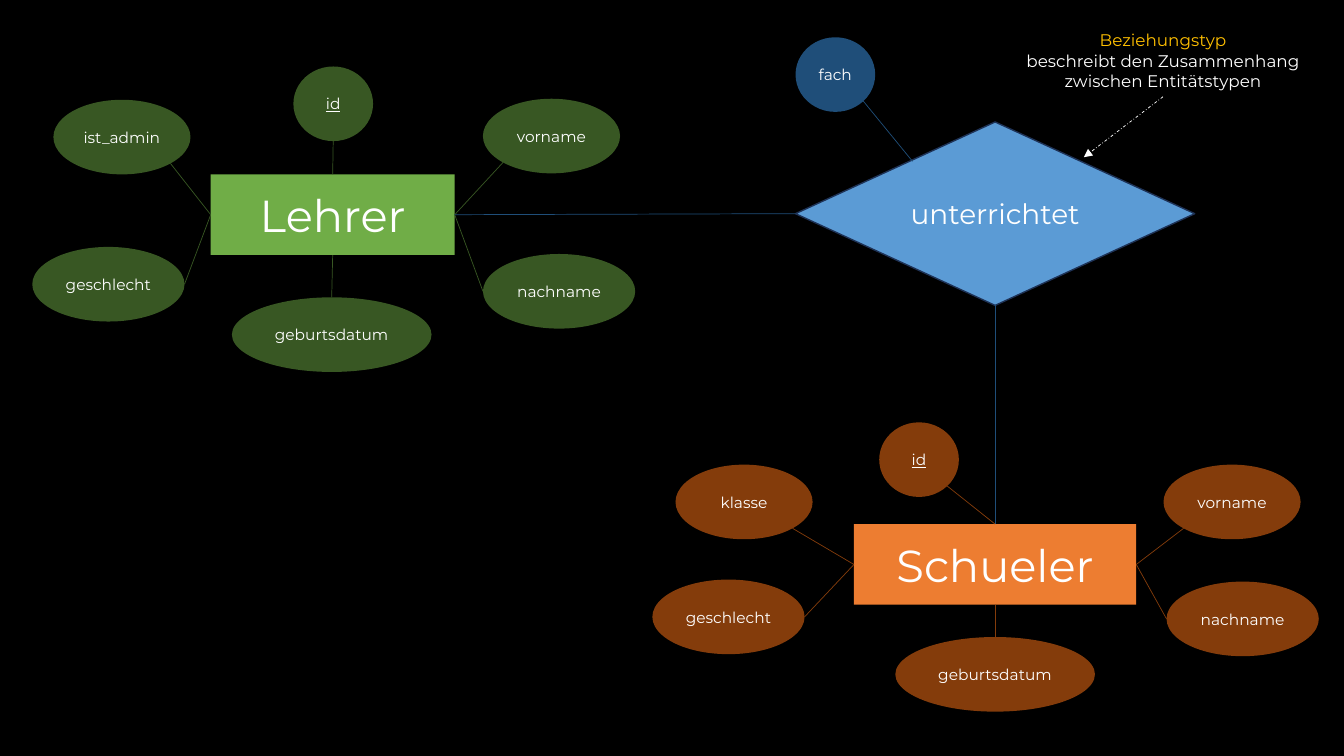
from math import hypot

from lxml import etree
from pptx import Presentation
from pptx.dml.color import RGBColor
from pptx.enum import dml, shapes, text
from pptx.oxml.ns import qn
from pptx.util import Inches, Pt

COLOURS = {
    "background": "000000", "text": "FFFFFF", "highlight": "FFC000",
    "teacher": "70AD47", "teacher_attribute": "385723",
    "student": "ED7D31", "student_attribute": "843C0B",
    "relation": "5B9BD5", "relation_attribute": "1F4E79", "relation_edge": "1E3256",
}
FONT = "Montserrat"
TOP, LEFT, BOTTOM, RIGHT = range(4)
FORMS = shapes.MSO_SHAPE

deck = Presentation()
deck.slide_width, deck.slide_height = Inches(13.33), Inches(7.5)
page = deck.slides.add_slide(deck.slide_layouts[6])
page.background.fill.solid()
page.background.fill.fore_color.rgb = RGBColor.from_string(COLOURS["background"])


def add_figure(form, place, colour, label, size):
    figure = page.shapes.add_shape(form, *map(Inches, place))
    figure.shadow.inherit = False
    figure.fill.solid()
    figure.fill.fore_color.rgb = RGBColor.from_string(COLOURS[colour])
    figure.line.fill.background()
    frame = figure.text_frame
    frame.word_wrap = False
    frame.vertical_anchor = text.MSO_ANCHOR.MIDDLE
    para = frame.paragraphs[0]
    para.alignment = text.PP_ALIGN.CENTER
    span = para.add_run()
    span.text = label
    span.font.name, span.font.size = FONT, Pt(size)
    span.font.underline = True if label == "id" else None
    span.font.color.rgb = RGBColor.from_string(COLOURS["text"])
    return figure


def add_link(figure, side, end, colour):
    """Draw a thin line from one side of a figure to a free point in inches."""
    link = page.shapes.add_connector(shapes.MSO_CONNECTOR.STRAIGHT, 0, 0, *map(Inches, end))
    link.begin_connect(figure, side)
    link.line.width = Pt(0.5)
    link.line.color.rgb = RGBColor.from_string(COLOURS[colour])
    etree.SubElement(link._element.spPr, qn("a:effectLst"))
    return link


# Attributes: label, left, top, width, side of the entity, direction to the rim point
entities = [
    ("Lehrer", "teacher", (2.09, 1.73, 2.42, 0.8), [
        ("id", 2.91, 0.66, 0.79, TOP, (0, 1)),
        ("vorname", 4.79, 0.98, 1.36, RIGHT, (-1, 1)),
        ("geschlecht", 0.32, 2.45, 1.51, LEFT, (1, 0)),
        ("geburtsdatum", 2.3, 2.95, 1.98, BOTTOM, (0, -1)),
        ("nachname", 4.79, 2.52, 1.51, RIGHT, (-1, 0)),
        ("ist_admin", 0.53, 0.99, 1.36, LEFT, (1, 1)),
    ]),
    ("Schueler", "student", (8.47, 5.2, 2.8, 0.8), [
        ("id", 8.72, 4.19, 0.79, TOP, (1, 1)),
        ("vorname", 11.54, 4.61, 1.36, RIGHT, (-1, 1)),
        ("geschlecht", 6.47, 5.75, 1.51, LEFT, (1, 0)),
        ("geburtsdatum", 8.88, 6.32, 1.98, BOTTOM, (0, -1)),
        ("nachname", 11.57, 5.77, 1.51, RIGHT, (-1, 0)),
        ("klasse", 6.7, 4.61, 1.36, LEFT, (1, 1)),
    ]),
]
ATTRIBUTE_HEIGHT = 0.74
boxes = {}
for name, colour, place, attributes in entities:
    boxes[name] = add_figure(FORMS.RECTANGLE, place, colour, name, 32)
    shade = f"{colour}_attribute"
    for label, left, top, width, side, (across, down) in attributes:
        add_figure(FORMS.OVAL, (left, top, width, ATTRIBUTE_HEIGHT), shade, label, 11)
        reach = hypot(across, down)
        rim = (left + width / 2 * (1 + across / reach),
               top + ATTRIBUTE_HEIGHT / 2 * (1 + down / reach))
        add_link(boxes[name], side, rim, shade)

# Relationship with its own attribute
relation = add_figure(FORMS.DIAMOND, (7.89, 1.21, 3.96, 1.82), "relation", "unterrichtet", 20)
relation.line.width = Pt(1)
relation.line.color.rgb = RGBColor.from_string(COLOURS["relation_edge"])
for name, entity_side, relation_side in [("Lehrer", RIGHT, LEFT), ("Schueler", TOP, BOTTOM)]:
    link = add_link(boxes[name], entity_side, (0, 0), "relation_attribute")
    link.end_connect(relation, relation_side)

add_figure(FORMS.OVAL, (7.89, 0.37, 0.79, ATTRIBUTE_HEIGHT), "relation_attribute", "fach", 11)
subject_link = page.shapes.add_connector(
    shapes.MSO_CONNECTOR.STRAIGHT, Inches(9.05), Inches(1.6), Inches(8.56), Inches(1))
subject_link.line.width = Pt(0.5)
subject_link.line.color.rgb = RGBColor.from_string(COLOURS["relation_attribute"])
etree.SubElement(subject_link._element.spPr, qn("a:effectLst"))

# Explanation with a dashed arrow to the relationship
note = page.shapes.add_textbox(Inches(9.99), Inches(0.25), Inches(3.09), Inches(0.71))
frame = note.text_frame
frame.word_wrap = True
lines = [("Beziehungstyp", "highlight"),
         ("beschreibt den Zusammenhang zwischen Entitätstypen", "text")]
for number, (words, colour) in enumerate(lines):
    para = frame.add_paragraph() if number else frame.paragraphs[0]
    para.alignment = text.PP_ALIGN.CENTER
    span = para.add_run()
    span.text = words
    span.font.name, span.font.size = FONT, Pt(12)
    span.font.color.rgb = RGBColor.from_string(COLOURS[colour])

arrow = add_link(note, BOTTOM, (10.75, 1.56), "text")
arrow.line.dash_style = dml.MSO_LINE.DASH_DOT
etree.SubElement(arrow.line._get_or_add_ln(), qn("a:tailEnd"), type="triangle")

deck.save("out.pptx")
